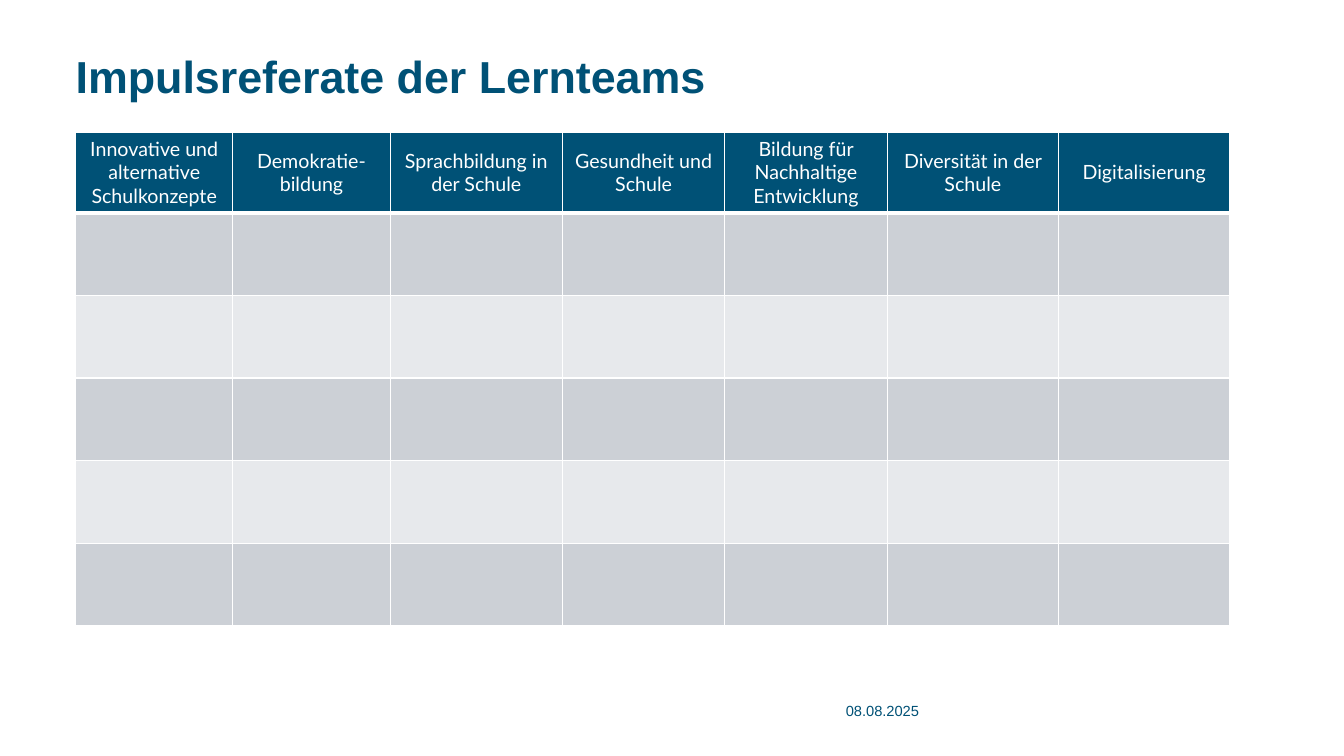
import pptx
import pptx.dml.color
import pptx.enum.text
import pptx.oxml
import pptx.oxml.ns
import pptx.util
from pptx.util import Inches

BLUE, WHITE = "005176", "FFFFFF"
DARK_BAND, LIGHT_BAND = "CCD0D6", "E7E9EC"
MIDDLE = pptx.enum.text.MSO_ANCHOR.MIDDLE
TOP = pptx.enum.text.MSO_ANCHOR.TOP
LEFT = pptx.enum.text.PP_ALIGN.LEFT
CENTER = pptx.enum.text.PP_ALIGN.CENTER


def color(value):
    return pptx.dml.color.RGBColor.from_string(value)


def write(frame, text, size, font="Arial", fill=BLUE, bold=False, align=LEFT, spacing=1.0):
    frame.word_wrap = True
    paragraph = frame.paragraphs[0]
    paragraph.alignment = align
    paragraph.line_spacing = spacing
    run = paragraph.add_run()
    run.text = text
    run.font.name = font
    run.font.size = pptx.util.Pt(size)
    run.font.bold = bold
    run.font.color.rgb = color(fill)


presentation = pptx.Presentation()
presentation.slide_width = Inches(13.33)
presentation.slide_height = Inches(7.5)
slide = presentation.slides.add_slide(presentation.slide_layouts[6])

for text, place, anchor, text_format in [
    ("08.08.2025", (8.39, 6.92, 1.34, 0.27), MIDDLE, {"size": 10.5}),
    ("Impulsreferate der Lernteams", (0.75, 0.54, 11.98, 0.5), TOP,
     {"size": 32, "bold": True, "spacing": 0.9}),
]:
    frame = slide.shapes.add_textbox(*map(Inches, place)).text_frame
    frame.margin_left = frame.margin_top = frame.margin_right = frame.margin_bottom = 0
    frame.vertical_anchor = anchor
    write(frame, text, **text_format)

topics = [
    ("Innovative und alternative Schulkonzepte", 1.56),
    ("Demokratie-bildung", 1.56),
    ("Sprachbildung in der Schule", 1.71),
    ("Gesundheit und Schule", 1.61),
    ("Bildung für Nachhaltige Entwicklung", 1.61),
    ("Diversität in der Schule", 1.7),
    ("Digitalisierung", 1.7),
]
row_heights = [0.79] + [0.82] * 5
table = slide.shapes.add_table(
    len(row_heights), len(topics), Inches(0.75), Inches(1.31), Inches(11.46), Inches(4.88)
).table

for row, height in zip(table.rows, row_heights):
    row.height = Inches(height)

for column_index, (topic, width) in enumerate(topics):
    table.columns[column_index].width = Inches(width)
    for row_index in range(len(row_heights)):
        cell = table.cell(row_index, column_index)
        is_header = row_index == 0
        properties = cell._tc.get_or_add_tcPr()
        for side in "LRTB":
            line_width = pptx.util.Pt(3 if is_header and side == "B" else 1)
            properties.append(pptx.oxml.parse_xml(
                f'<a:ln{side} {pptx.oxml.ns.nsdecls("a")} w="{line_width}">'
                f'<a:solidFill><a:srgbClr val="{WHITE}"/></a:solidFill></a:ln{side}>'
            ))
        cell.fill.solid()
        if is_header:
            cell.fill.fore_color.rgb = color(BLUE)
            cell.vertical_anchor = MIDDLE
            write(cell.text_frame, topic, 14, font="Lato", fill=WHITE, align=CENTER)
        else:
            cell.fill.fore_color.rgb = color(DARK_BAND if row_index % 2 else LIGHT_BAND)

presentation.save("out.pptx")
